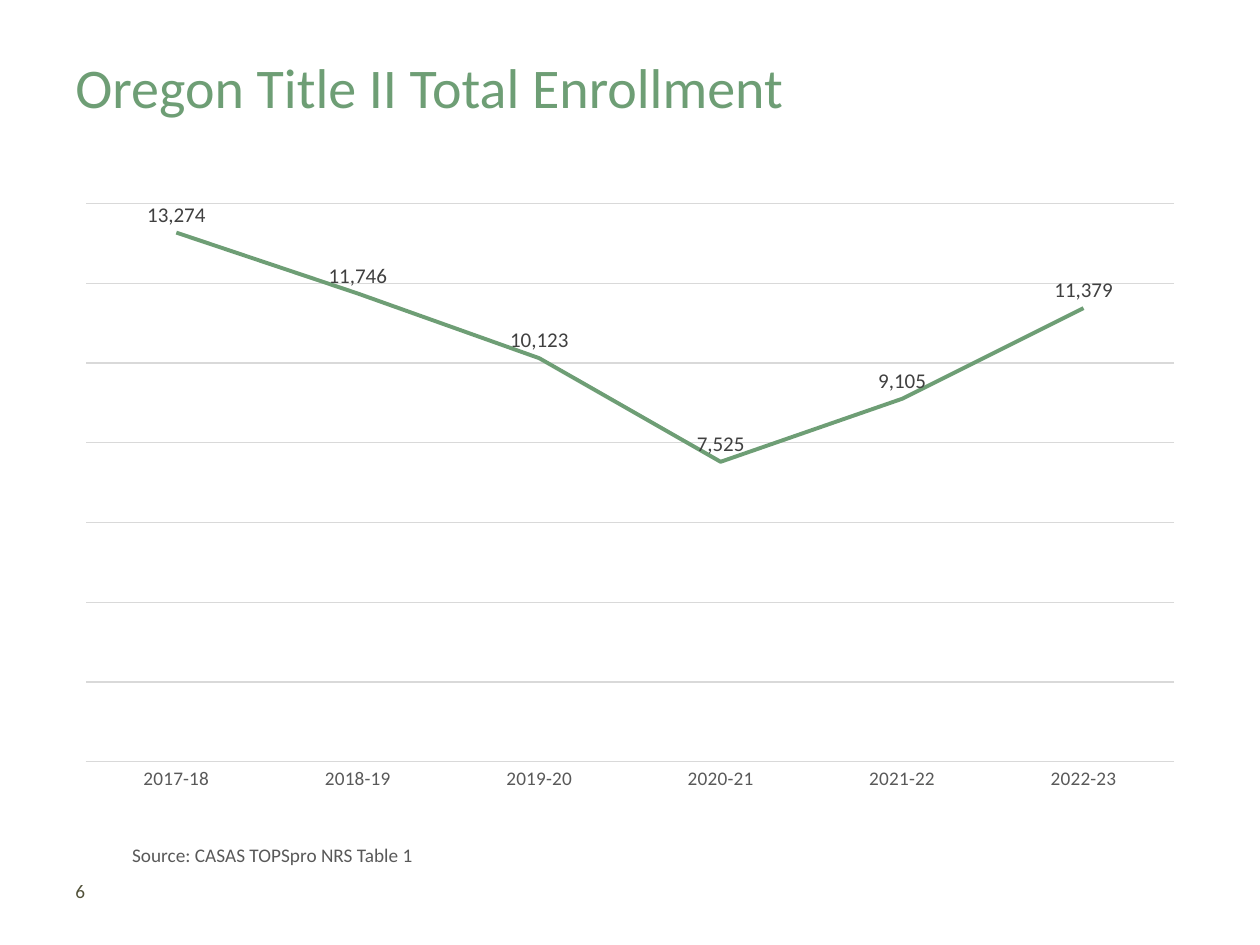
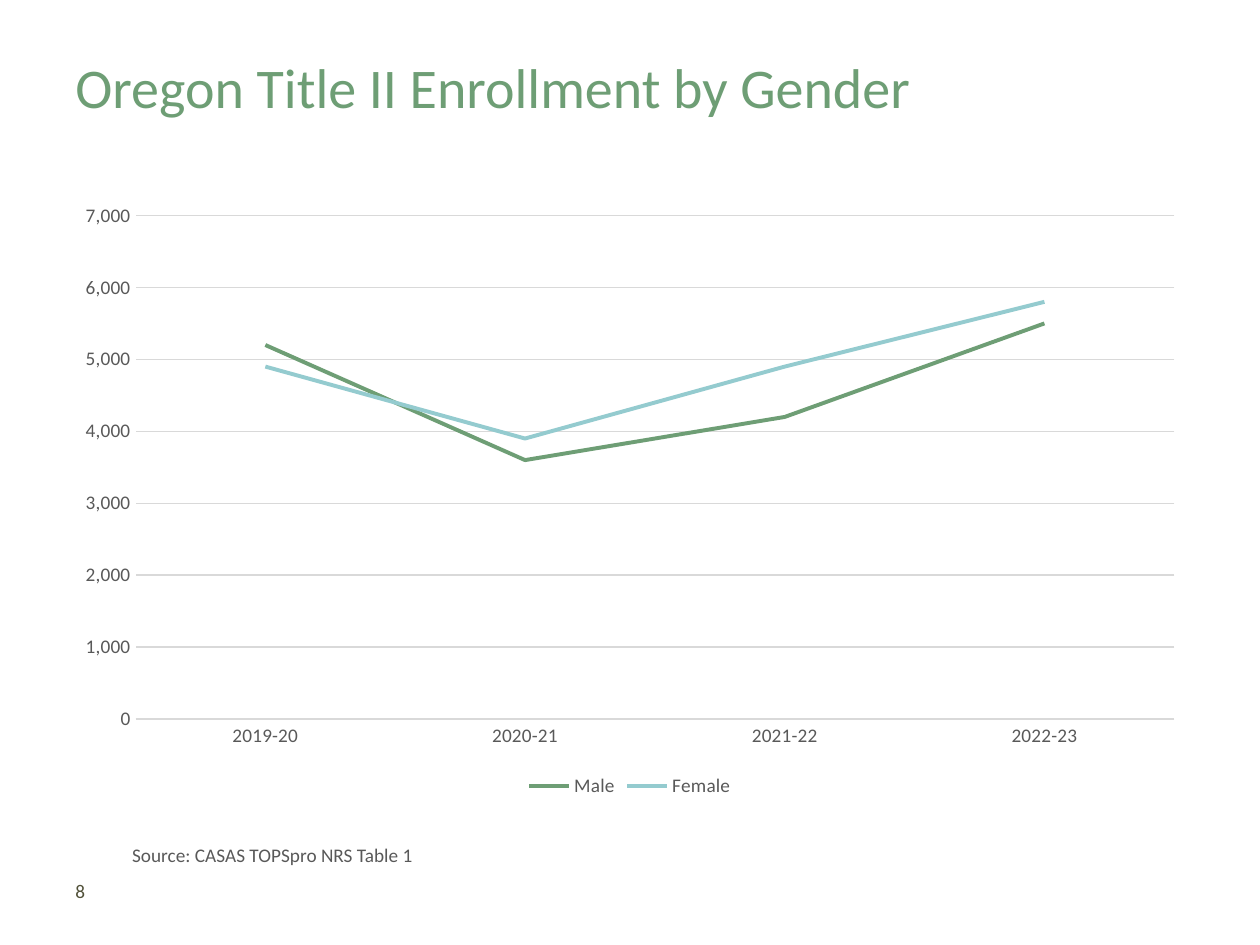
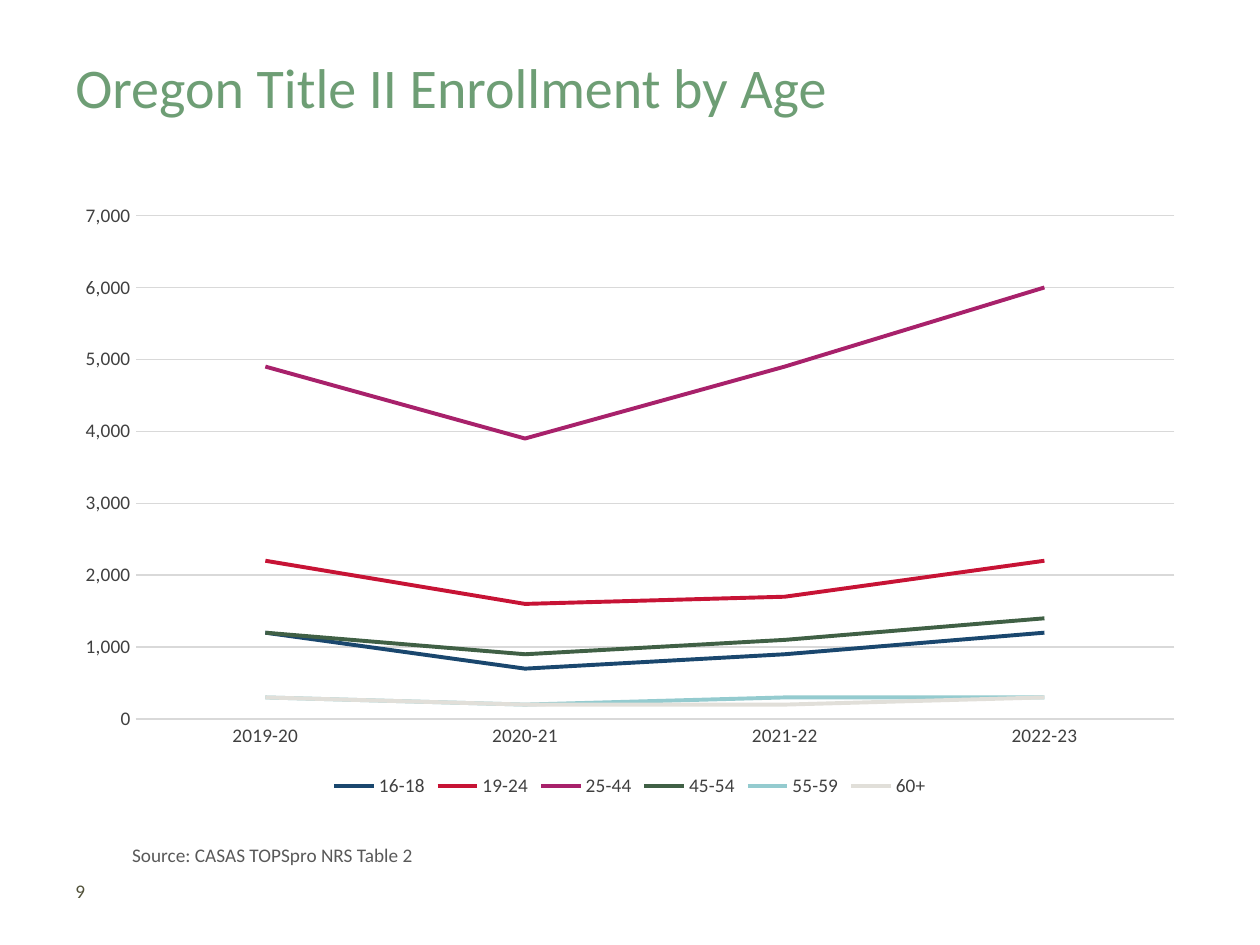
import pptx
import pptx.chart.data
import pptx.dml.color
import pptx.enum.chart
import pptx.enum.text
import pptx.util

RGB = pptx.dml.color.RGBColor
In, Pt = pptx.util.Inches, pptx.util.Pt
ANCHOR = pptx.enum.text.MSO_ANCHOR
AUTO = pptx.enum.text.MSO_AUTO_SIZE
XL = pptx.enum.chart

# Shared style
FONT = "Calibri"
GREEN = RGB(0x6E, 0x9E, 0x75)
TEAL = RGB(0x94, 0xCB, 0xCF)
NAVY = RGB(0x1A, 0x47, 0x6E)
RED = RGB(0xC7, 0x13, 0x35)
PLUM = RGB(0xA8, 0x21, 0x6B)
FOREST = RGB(0x40, 0x60, 0x45)
STONE = RGB(0xE1, 0xDF, 0xD9)
GREY = RGB(0x59, 0x59, 0x59)
DARK = RGB(0x40, 0x40, 0x40)
OLIVE = RGB(0x51, 0x51, 0x39)
GRID = RGB(0xD9, 0xD9, 0xD9)
WHITE = RGB(0xFF, 0xFF, 0xFF)
NUMBER = "#,##0"

# Slide size and the column shared by title, chart and page number
WIDTH, HEIGHT, MARGIN = 10, 7.5, 0.5
COLUMN = WIDTH - 2 * MARGIN

# Content
YEARS = ["2017-18", "2018-19", "2019-20", "2020-21", "2021-22", "2022-23"]
SLIDES = [
    dict(title="Oregon Title II Total Enrollment", page=6,
         source="Source: CASAS TOPSpro NRS Table 1",
         years=YEARS, top=14000, step=2000, ink=GREY, labelled=True,
         series=[("Series 1", GREEN, (13274, 11746, 10123, 7525, 9105, 11379))]),
    dict(title="Oregon Title II Enrollment by Gender", page=8,
         source="Source: CASAS TOPSpro NRS Table 1",
         years=YEARS[2:], top=7000, step=1000, ink=GREY, labelled=False,
         series=[("Male", GREEN, (5200, 3600, 4200, 5500)),
                 ("Female", TEAL, (4900, 3900, 4900, 5800))]),
    dict(title="Oregon Title II Enrollment by Age", page=9,
         source="Source: CASAS TOPSpro NRS Table 2",
         years=YEARS[2:], top=7000, step=1000, ink=DARK, labelled=False,
         series=[("16-18", NAVY, (1200, 700, 900, 1200)),
                 ("19-24", RED, (2200, 1600, 1700, 2200)),
                 ("25-44", PLUM, (4900, 3900, 4900, 6000)),
                 ("45-54", FOREST, (1200, 900, 1100, 1400)),
                 ("55-59", TEAL, (300, 200, 300, 300)),
                 ("60+", STONE, (300, 200, 200, 300))]),
]


def set_font(font, size, color):
    font.name, font.size = FONT, Pt(size)
    font.color.rgb = color


def add_text(s, text, box, size=11, color=GREY, anchor=ANCHOR.TOP, wrap=True):
    sp = s.shapes.add_textbox(*map(In, box))
    tf = sp.text_frame
    tf.word_wrap = wrap
    tf.auto_size = AUTO.NONE if wrap else AUTO.SHAPE_TO_FIT_TEXT
    tf.vertical_anchor = anchor
    r = tf.paragraphs[0].add_run()
    r.text = text
    set_font(r.font, size, color)


def add_line_chart(s, years, series, top, step, ink, labelled):
    data = pptx.chart.data.CategoryChartData(number_format=NUMBER)
    data.categories = years
    for name, _, values in series:
        data.add_series(name, values)
    box = map(In, (MARGIN, 1.52, COLUMN, 4.85))
    chart = s.shapes.add_chart(XL.XL_CHART_TYPE.LINE, *box, data).chart
    chart.has_title = False
    set_font(chart.font, 10, ink)
    plot = chart.plots[0]
    plot.vary_by_categories = False

    # Axes
    years_axis, count_axis = chart.category_axis, chart.value_axis
    for axis in (years_axis, count_axis):
        axis.major_tick_mark = axis.minor_tick_mark = XL.XL_TICK_MARK.NONE
        set_font(axis.tick_labels.font, 11, ink)
    count_axis.minimum_scale, count_axis.maximum_scale = 0, top
    count_axis.major_unit = step
    count_axis.tick_labels.number_format = NUMBER
    count_axis.tick_labels.number_format_is_linked = False
    count_axis.format.line.fill.background()
    count_axis.visible = not labelled
    count_axis.has_major_gridlines = True
    for line in (years_axis.format.line, count_axis.major_gridlines.format.line):
        line.color.rgb, line.width = GRID, Pt(0.75)

    # Lines
    for ser, (_, color, _) in zip(plot.series, series):
        ser.smooth = False
        ser.marker.style = XL.XL_MARKER_STYLE.NONE
        ser.format.line.color.rgb = color
        ser.format.line.width = Pt(2.25)

    # Values on the line replace the legend and the value axis
    chart.has_legend = not labelled
    if labelled:
        labels = plot.series[0].data_labels
        labels.show_value = True
        labels.position = XL.XL_LABEL_POSITION.ABOVE
        labels.number_format, labels.number_format_is_linked = NUMBER, False
        set_font(labels.font, 12, DARK)
    else:
        chart.legend.position = XL.XL_LEGEND_POSITION.BOTTOM
        chart.legend.include_in_layout = False
        set_font(chart.legend.font, 11, ink)


def add_slide(prs, title, page, source, **chart):
    s = prs.slides.add_slide(prs.slide_layouts[6])
    s.background.fill.solid()
    s.background.fill.fore_color.rgb = WHITE
    add_line_chart(s, **chart)
    add_text(s, title, (MARGIN, 0.37, COLUMN, 1), size=32, color=GREEN)
    add_text(s, str(page), (MARGIN, 6.92, 2.33, 0.3), color=OLIVE,
             anchor=ANCHOR.MIDDLE)
    add_text(s, source, (0.95, 6.64, 2.47, 0.29), wrap=False)


def main():
    prs = pptx.Presentation()
    prs.slide_width, prs.slide_height = In(WIDTH), In(HEIGHT)
    for content in SLIDES:
        add_slide(prs, **content)
    prs.save("out.pptx")


if __name__ == "__main__":
    main()
